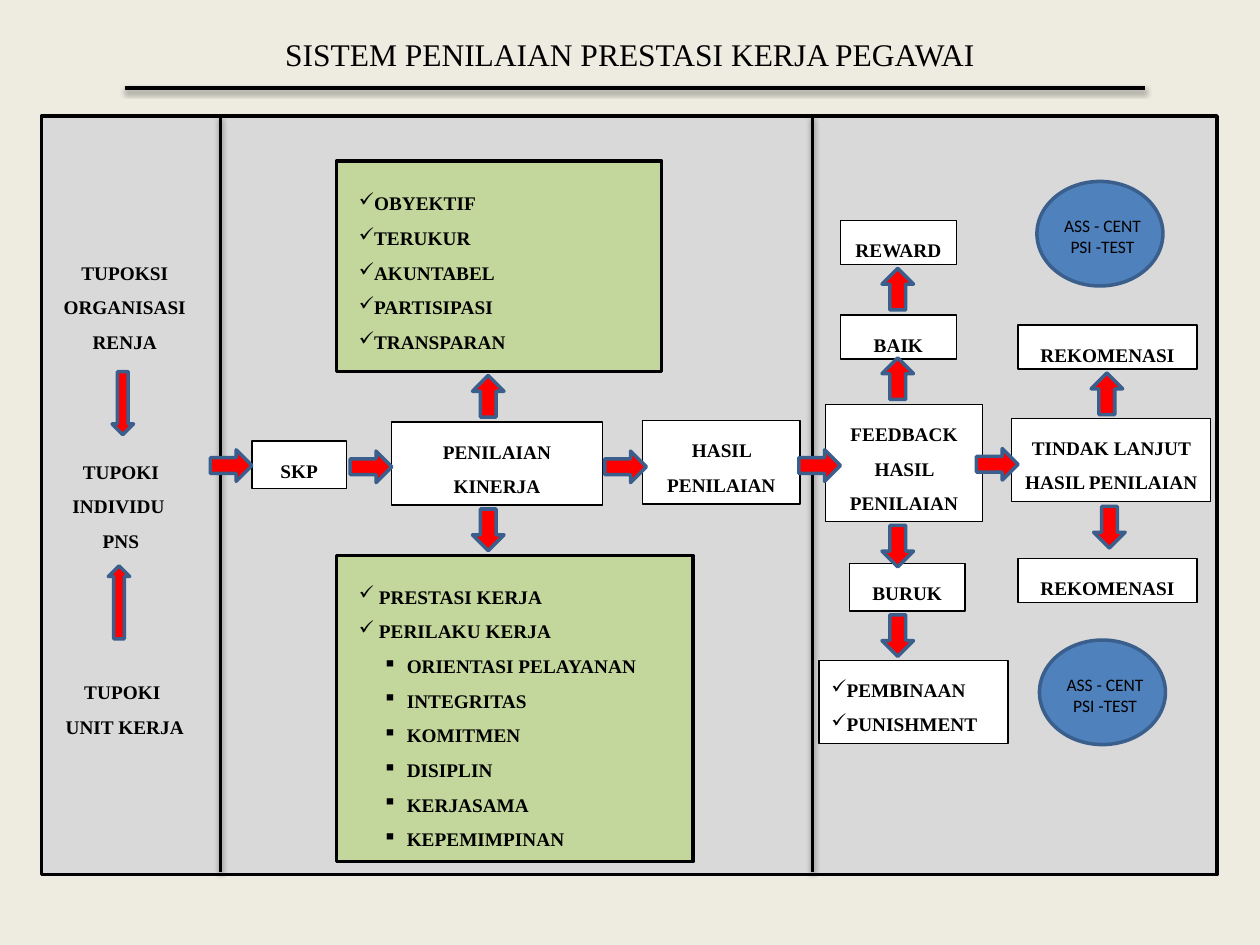
from lxml import etree
from pptx import Presentation
from pptx.dml.color import RGBColor
from pptx.enum.shapes import MSO_CONNECTOR, MSO_SHAPE
from pptx.enum.text import MSO_ANCHOR, PP_ALIGN
from pptx.oxml import parse_xml
from pptx.oxml.ns import nsdecls, qn
from pptx.util import Inches, Pt

RECT, OVAL = MSO_SHAPE.RECTANGLE, MSO_SHAPE.OVAL
RIGHT_ARROW = MSO_SHAPE.RIGHT_ARROW
DOWN_ARROW, UP_ARROW = MSO_SHAPE.DOWN_ARROW, MSO_SHAPE.UP_ARROW
STRAIGHT = MSO_CONNECTOR.STRAIGHT
TOP = MSO_ANCHOR.TOP
LEFT, CENTER = PP_ALIGN.LEFT, PP_ALIGN.CENTER

BLACK, WHITE, GREY, GREEN = "000000", "FFFFFF", "D9D9D9", "C3D69B"
RED, BLUE, DARK_BLUE = "FF0000", "4F81BD", "3A5F8C"
SERIF = "Times New Roman"
CHECK, SQUARE = "✓", "▪"
EAST, SOUTH, NORTH = 0, 90, 270


def rgb(color):
    return RGBColor.from_string(color)


def place(box, left, top, width, height):
    """Turn a position relative to a region's box into slide lengths."""
    return Inches(box[0] + left), Inches(box[1] + top), Inches(width), Inches(height)


def add_figure(slide, kind, area, fill, line=BLACK, weight=2, rotation=0):
    figure = slide.shapes.add_shape(kind, *area)
    figure.shadow.inherit = False
    figure.fill.solid()
    figure.fill.fore_color.rgb = rgb(fill)
    figure.line.color.rgb = rgb(line)
    figure.line.width = Pt(weight)
    figure.rotation = rotation
    return figure


def set_bullet(paragraph, bullet, margin, hanging):
    props = paragraph._p.get_or_add_pPr()
    props.set("marL", str(Inches(margin)))
    props.set("indent", str(-Inches(hanging)))
    etree.SubElement(props, qn("a:buChar")).set("char", bullet)


def write(frame, text, size=11, font=SERIF, bold=True, spacing=1.5, align=CENTER,
          bullet=None, margin=0, hanging=0, append=False):
    """Write each line of text as a paragraph; append keeps what is there."""
    frame.word_wrap = True
    frame.vertical_anchor = TOP
    for number, line in enumerate(text.split("\n")):
        first = number == 0 and not append
        paragraph = frame.paragraphs[0] if first else frame.add_paragraph()
        paragraph.alignment = align
        paragraph.line_spacing = spacing
        if bullet:
            set_bullet(paragraph, bullet, margin, hanging)
        run = paragraph.add_run()
        run.text = line
        run.font.name = font
        run.font.size = Pt(size)
        run.font.bold = bold
        run.font.color.rgb = rgb(BLACK)


def add_label(slide, area, text, **style):
    frame = slide.shapes.add_textbox(*area).text_frame
    write(frame, text, **style)
    return frame


def add_step(slide, area, text, **style):
    step = add_figure(slide, RECT, area, WHITE, weight=0.75)
    write(step.text_frame, text, **style)


def add_flow_arrows(slide, box, arrows):
    for left, top, direction in arrows:
        add_figure(slide, RIGHT_ARROW, place(box, left, top, 0.33, 0.25),
                   RED, DARK_BLUE, rotation=direction)


def add_rule(slide, x1, y1, x2, y2):
    rule = slide.shapes.add_connector(STRAIGHT, Inches(x1), Inches(y1), Inches(x2), Inches(y2))
    rule.line.color.rgb = rgb(BLACK)
    rule.line.width = Pt(2)
    rule._element.spPr.append(parse_xml(
        f'<a:effectLst {nsdecls("a")}><a:outerShdw blurRad="{Pt(3.1)}" dist="{Pt(1.6)}"'
        ' dir="5400000" rotWithShape="0"><a:srgbClr val="000000"><a:alpha val="38000"/>'
        '</a:srgbClr></a:outerShdw></a:effectLst>'))


def add_heading(slide, box):
    add_label(slide, place(box, 0, 0, 8.5, 0.4), "SISTEM PENILAIAN PRESTASI KERJA PEGAWAI",
              size=18, bold=False, spacing=1)
    left, top = box
    add_rule(slide, left + 0.24, top + 0.47, left + 8.34, top + 0.47)


def add_duties(slide, box):
    for left, top, height, text in [
        (-0.05, 1.01, 0.93, "TUPOKSI ORGANISASI RENJA"),
        (-0.08, 2.59, 0.93, "TUPOKI INDIVIDU \nPNS"),
        (-0.05, 4.34, 0.62, "TUPOKI \nUNIT KERJA"),
    ]:
        add_label(slide, place(box, left, top, 1.42, height), text)
    add_figure(slide, DOWN_ARROW, place(box, 0.56, 2.03, 0.17, 0.5), RED, DARK_BLUE)
    add_figure(slide, UP_ARROW, place(box, 0.53, 3.57, 0.17, 0.58), RED, DARK_BLUE)


def add_appraisal(slide, box):
    checks = dict(align=LEFT, bullet=CHECK, margin=0.12, hanging=0.12)
    add_figure(slide, RECT, place(box, 0.92, 0.36, 2.58, 1.67), GREEN)
    add_label(slide, place(box, 1, 0.46, 2.42, 1.46),
              "OBYEKTIF\nTERUKUR\nAKUNTABEL\nPARTISIPASI\nTRANSPARAN", **checks)

    add_figure(slide, RECT, place(box, 0.92, 3.49, 2.83, 2.43), GREEN)
    criteria = add_label(slide, place(box, 1, 3.58, 2.75, 2.32),
                         " PRESTASI KERJA\n PERILAKU KERJA", **checks)
    write(criteria, "ORIENTASI PELAYANAN\nINTEGRITAS\nKOMITMEN\nDISIPLIN\nKERJASAMA\nKEPEMIMPINAN",
          align=LEFT, bullet=SQUARE, margin=0.38, hanging=0.19, append=True)

    add_step(slide, place(box, 0.25, 2.58, 0.75, 0.38), "SKP")
    add_step(slide, place(box, 1.36, 2.43, 1.67, 0.66), "PENILAIAN KINERJA")
    add_step(slide, place(box, 3.35, 2.42, 1.25, 0.66), "HASIL PENILAIAN")
    add_flow_arrows(slide, box, [
        (-0.08, 2.65, EAST), (1.03, 2.66, EAST), (3.05, 2.66, EAST),
        (1.96, 2.1, NORTH), (1.96, 3.16, SOUTH)])


def add_follow_up(slide, box):
    for left, top, width, height, text in [
        (0.1, 2.29, 1.25, 0.93, "FEEDBACK HASIL PENILAIAN"),
        (1.58, 2.4, 1.58, 0.66, "TINDAK LANJUT HASIL PENILAIAN"),
        (0.29, 3.55, 0.92, 0.38, "BURUK"),
        (0.22, 1.58, 0.92, 0.35, "BAIK"),
        (0.22, 0.83, 0.92, 0.35, "REWARD"),
        (1.63, 1.66, 1.42, 0.35, "REKOMENASI"),
        (1.63, 3.51, 1.42, 0.35, "REKOMENASI"),
    ]:
        add_step(slide, place(box, left, top, width, height), text)
    add_step(slide, place(box, 0.05, 4.32, 1.5, 0.66), "PEMBINAAN\nPUNISHMENT",
             align=LEFT, bullet=CHECK)
    for left, top in [(1.78, 0.52), (1.8, 4.16)]:
        add_figure(slide, OVAL, place(box, left, top, 1, 0.83), BLUE, DARK_BLUE)
        add_label(slide, place(box, left + 0.02, top + 0.22, 1, 0.44), "ASS - CENT\nPSI -TEST",
                  size=10, font="Calibri", bold=False, spacing=1)
    add_flow_arrows(slide, box, [
        (-0.11, 2.65, EAST), (1.3, 2.64, EAST),
        (0.51, 1.96, NORTH), (0.51, 1.25, NORTH), (2.17, 2.08, NORTH),
        (2.19, 3.14, SOUTH), (0.51, 3.29, SOUTH), (0.51, 4, SOUTH)])


def main():
    deck = Presentation()
    deck.slide_width, deck.slide_height = Inches(10), Inches(7.5)
    slide = deck.slides.add_slide(deck.slide_layouts[6])
    slide.background.fill.solid()
    slide.background.fill.fore_color.rgb = rgb("EEECE1")

    panel_left, panel_top = 0.33, 0.92
    dividers = 1.75, 6.45
    add_figure(slide, RECT, place((panel_left, panel_top), 0, 0, 9.33, 6.02), GREY)
    add_heading(slide, (0.75, 0.23))
    for x in dividers:
        add_rule(slide, x, panel_top, x, panel_top + 6)
    add_duties(slide, (panel_left, panel_top))
    add_appraisal(slide, (dividers[0], panel_top))
    add_follow_up(slide, (dividers[1], panel_top))
    deck.save("out.pptx")


if __name__ == "__main__":
    main()
